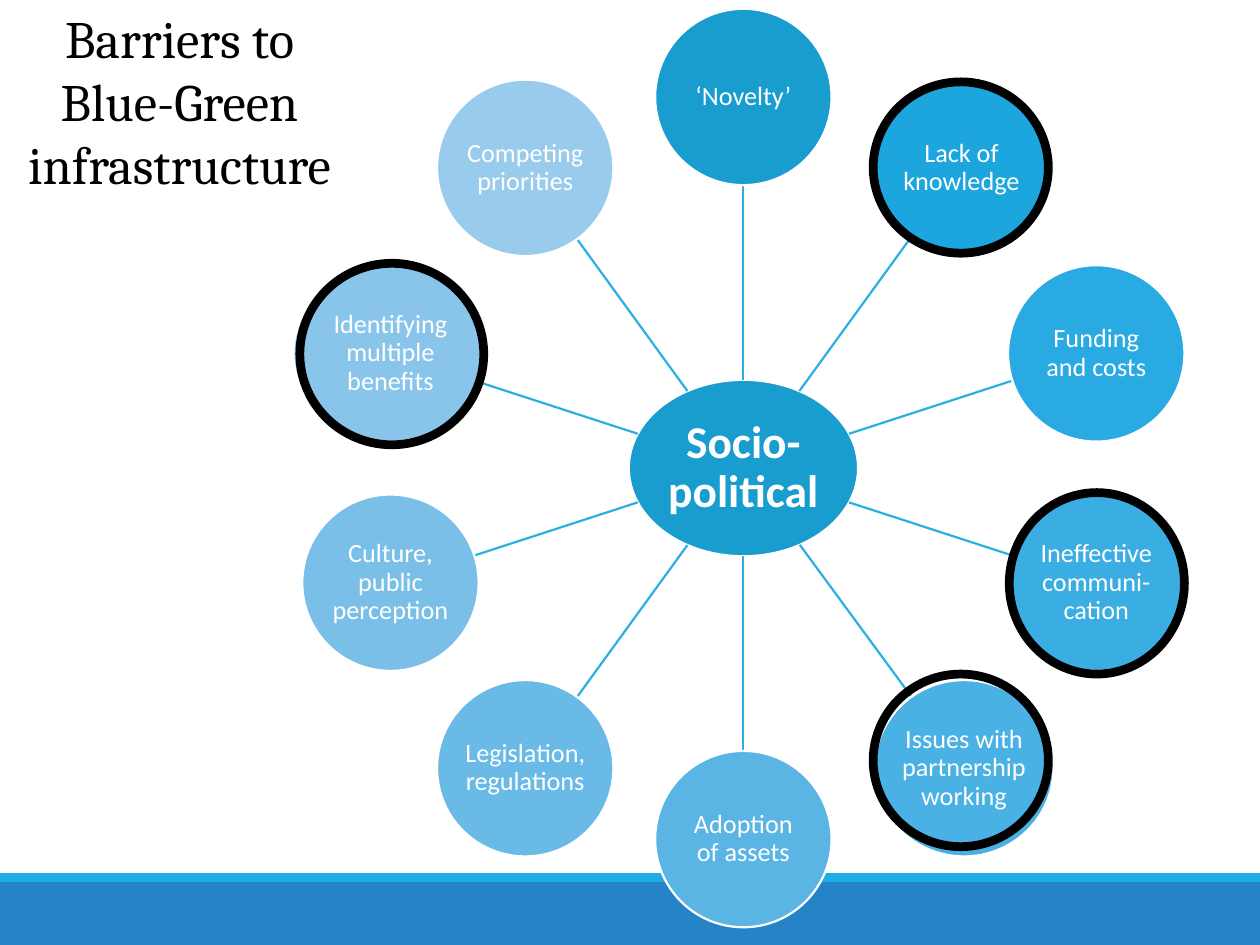
"""Build a radial slide on socio-political barriers to Blue-Green infrastructure."""
from dataclasses import dataclass
from math import cos, hypot, radians, sin
from typing import Optional

from lxml import etree
from pptx import Presentation
from pptx.dml.color import RGBColor
from pptx.enum.shapes import MSO_CONNECTOR, MSO_SHAPE
from pptx.enum.text import MSO_ANCHOR, MSO_AUTO_SIZE, PP_ALIGN
from pptx.oxml.ns import qn
from pptx.util import Inches, Pt

OVAL = MSO_SHAPE.OVAL
RECTANGLE = MSO_SHAPE.RECTANGLE
STRAIGHT = MSO_CONNECTOR.STRAIGHT
CENTER = PP_ALIGN.CENTER
TOP = MSO_ANCHOR.TOP
MIDDLE = MSO_ANCHOR.MIDDLE
NO_AUTOFIT = MSO_AUTO_SIZE.NONE

SLIDE_WIDTH = Inches(10)
SLIDE_HEIGHT = Inches(7.5)
COLUMNS = 100
ROWS = 75
TITLE_ONLY = 5

HUB_X, HUB_Y = 59, 37.15
ORBIT = 29.45
NODE_SIZE = 14
WHITE = "FFFFFF"
BLACK = "000000"
SPOKE_COLOR = "2AAEE4"


@dataclass(frozen=True)
class Box:
    """A rectangle in grid columns and rows."""
    left: float
    top: float
    width: float
    height: float


@dataclass(frozen=True)
class Barrier:
    """An outer circle, with an optional emphasis ring."""
    text: str
    fill: str
    width: float = NODE_SIZE
    shift: float = 0
    ring: Optional[Box] = None


BARRIERS = [
    Barrier("‘Novelty’", "199DCF"),
    Barrier("Lack of knowledge", "1DA6DD", ring=Box(69.3, 6.5, 13.9, 13.6)),
    Barrier("Funding and costs", "29AAE2"),
    Barrier("Ineffective communi-cation", "3AADE3", ring=Box(80.1, 39.1, 13.9, 14.4)),
    Barrier("Issues with partnership working", "4AB1E4", 14.2, 0.2,
            Box(69.3, 53.5, 13.9, 13.7)),
    Barrier("Adoption of assets", "5AB5E5"),
    Barrier("Legislation, regulations", "6ABAE7"),
    Barrier("Culture, public perception", "7ABFE8"),
    Barrier("Identifying multiple benefits", "89C5EA", 15.4,
            ring=Box(23.8, 20.9, 14.6, 14.4)),
    Barrier("Competing priorities", "99CBEC"),
]
HUB = Barrier("Socio-political", "199DCF", 18.2)


def color(value: str) -> RGBColor:
    """Return the colour for a hex string."""
    return RGBColor.from_string(value)


def across(columns: float) -> int:
    """Convert grid columns to a length."""
    return round(SLIDE_WIDTH * columns / COLUMNS)


def down(rows: float) -> int:
    """Convert grid rows to a length."""
    return round(SLIDE_HEIGHT * rows / ROWS)


def place(shape, box: Box) -> None:
    """Move and size a shape to a grid box."""
    shape.left, shape.top = across(box.left), down(box.top)
    shape.width, shape.height = across(box.width), down(box.height)


def add_shape(slide, kind, box: Box, fill: Optional[str] = None,
              line: Optional[str] = None, weight: float = 1.25):
    """Add a flat preset shape."""
    shape = slide.shapes.add_shape(kind, 0, 0, 0, 0)
    place(shape, box)
    shape.shadow.inherit = False
    if fill:
        shape.fill.solid()
        shape.fill.fore_color.rgb = color(fill)
    else:
        shape.fill.background()
    if line:
        shape.line.color.rgb = color(line)
        shape.line.width = Pt(weight)
    else:
        shape.line.fill.background()
    return shape


def write(shape, text: str, font: str, size: float, value: str, bold: bool = False):
    """Write one centred run and return its paragraph."""
    shape.text_frame.word_wrap = True
    paragraph = shape.text_frame.paragraphs[0]
    paragraph.alignment = CENTER
    run = paragraph.add_run()
    run.text = text
    run.font.name = font
    run.font.size = Pt(size)
    run.font.bold = bold
    run.font.color.rgb = color(value)
    return paragraph


def add_circle(slide, barrier: Barrier, x: float, y: float, size: float,
               inset: float, bold: bool = False) -> None:
    """Add a labelled ellipse centred on a grid point."""
    box = Box(x - barrier.width / 2, y - NODE_SIZE / 2, barrier.width, NODE_SIZE)
    shape = add_shape(slide, OVAL, box, barrier.fill, WHITE)
    frame = shape.text_frame
    frame.margin_left = frame.margin_right = Inches(inset)
    frame.margin_top = frame.margin_bottom = Inches(inset)
    frame.vertical_anchor = MIDDLE
    write(shape, barrier.text, "Calibri", size, WHITE, bold).line_spacing = 0.9


def reach(width: float, across_share: float, down_share: float) -> float:
    """Return the distance from an ellipse's centre to its edge in a direction."""
    return 1 / hypot(across_share * 2 / width, down_share * 2 / NODE_SIZE)


def add_spoke(slide, barrier: Barrier, x: float, y: float) -> None:
    """Join the edge of the hub to the edge of a barrier."""
    length = hypot(x - HUB_X, y - HUB_Y)
    step_x, step_y = (x - HUB_X) / length, (y - HUB_Y) / length
    start = reach(HUB.width, step_x, step_y)
    end = length - reach(barrier.width, step_x, step_y)
    connector = slide.shapes.add_connector(
        STRAIGHT,
        across(HUB_X + start * step_x), down(HUB_Y + start * step_y),
        across(HUB_X + end * step_x), down(HUB_Y + end * step_y))
    connector.line.color.rgb = color(SPOKE_COLOR)
    connector.line.width = Pt(1.25)
    etree.SubElement(connector._element.spPr, qn("a:effectLst"))


def add_title(slide) -> None:
    """Format the title placeholder."""
    title = slide.shapes.title
    place(title, Box(0, 0, 28.5, 16.2))
    title.text_frame.vertical_anchor = TOP
    title.text_frame.auto_size = NO_AUTOFIT
    write(title, "Barriers to Blue-Green infrastructure", "Cambria", 30, BLACK)


def main() -> None:
    """Build and save the presentation."""
    presentation = Presentation()
    presentation.slide_width = SLIDE_WIDTH
    presentation.slide_height = SLIDE_HEIGHT
    slide = presentation.slides.add_slide(presentation.slide_layouts[TITLE_ONLY])
    add_title(slide)
    add_shape(slide, RECTANGLE, Box(0, 70, COLUMNS, 5), "2683C6")
    add_shape(slide, RECTANGLE, Box(0, 69.3, COLUMNS, 0.7), "1CADE4")
    add_circle(slide, HUB, HUB_X, HUB_Y, 26, 0.02, bold=True)
    for index, barrier in enumerate(BARRIERS):
        angle = radians(360 * index / len(BARRIERS))
        x = HUB_X + ORBIT * sin(angle) + barrier.shift
        y = HUB_Y - ORBIT * cos(angle)
        add_spoke(slide, barrier, x, y)
        add_circle(slide, barrier, x, y, 15, 0.01)
    for barrier in BARRIERS:
        if barrier.ring:
            add_shape(slide, OVAL, barrier.ring, line=BLACK, weight=5)
    presentation.save("out.pptx")


if __name__ == "__main__":
    main()
